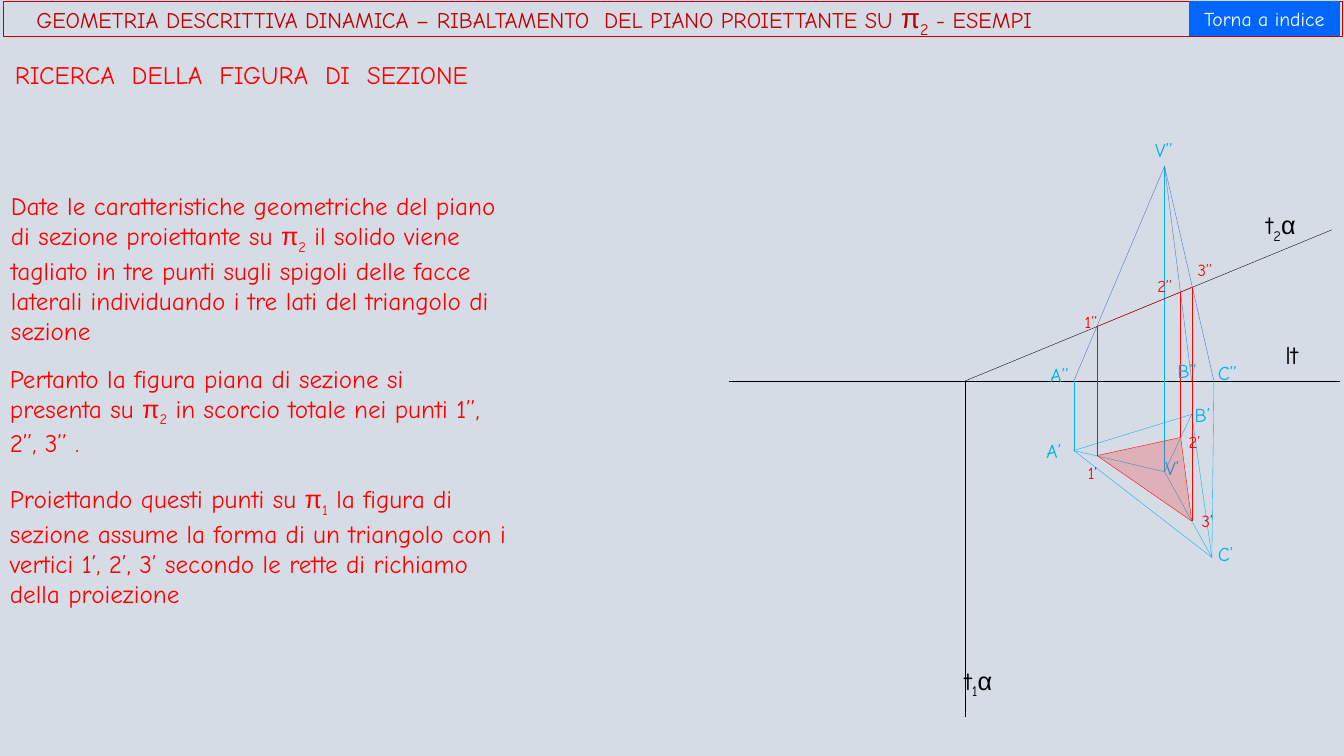
from dataclasses import dataclass
from itertools import combinations, groupby

from lxml.etree import SubElement
from pptx import Presentation
from pptx.dml.color import RGBColor
from pptx.enum.shapes import MSO_CONNECTOR, MSO_SHAPE
from pptx.enum.text import MSO_ANCHOR, MSO_AUTO_SIZE, PP_ALIGN
from pptx.oxml.ns import qn
from pptx.shapes.autoshape import Shape
from pptx.slide import Slide
from pptx.text.text import TextFrame
from pptx.util import Inches, Pt

Point = tuple[float, float]


@dataclass(frozen=True)
class Theme:
    font: str = "Comic Neue"
    symbol_font: str = "Arial"
    background: str = "D6DCE5"
    ink: str = "000000"
    red: str = "FF0000"
    header: str = "C00000"
    cyan: str = "00B0F0"
    blue: str = "4472C4"
    button: str = "0066FF"
    white: str = "FFFFFF"
    body_size: int = 18
    header_size: int = 16
    header_symbol_size: int = 20
    vertex_size: int = 14
    section_size: int = 12
    line_width: float = 0.25
    section_alpha: int = 20


THEME = Theme()
SUBSCRIPTS = {"₁": "1", "₂": "2"}
GREEK = "πα"


@dataclass(frozen=True)
class TextBox:
    text: str
    left: float
    top: float
    width: float
    height: float
    color: str = THEME.red
    size: int = THEME.body_size


@dataclass(frozen=True)
class Segment:
    start: Point
    end: Point
    color: str


def vertex_label(text: str, left: float, top: float) -> TextBox:
    return TextBox(text, left, top, 0.53, 0.34, THEME.cyan, THEME.vertex_size)


def section_label(text: str, left: float, top: float) -> TextBox:
    return TextBox(text, left, top, 0.39, 0.3, THEME.red, THEME.section_size)


GROUND_Y = 3.78
TRACE_ORIGIN = (9.57, GROUND_Y)
V1, V2 = (11.55, 4.68), (11.55, 1.65)
BASE_PLAN = [(10.65, 4.47), (11.82, 4.11), (12.02, 5.53)]
BASE_ELEVATION = [(10.65, GROUND_Y), (11.82, GROUND_Y), (12.04, GROUND_Y)]
SECTION_PLAN = [(10.88, 4.52), (11.71, 4.34), (11.82, 5.17)]
SECTION_ELEVATION = [(10.88, 3.24), (11.71, 2.9), (11.82, 2.85)]

SEGMENTS = [
    Segment((7.23, GROUND_Y), (13.29, GROUND_Y), THEME.ink),
    *[Segment(vertex, V1, THEME.cyan) for vertex in BASE_PLAN],
    Segment(V1, V2, THEME.cyan),
    *[Segment(vertex, V2, THEME.blue) for vertex in BASE_ELEVATION],
    *[Segment(plan, elevation, THEME.cyan)
      for plan, elevation in zip(BASE_PLAN, BASE_ELEVATION)],
    Segment(TRACE_ORIGIN, (9.57, 7.11), THEME.ink),
    Segment(TRACE_ORIGIN, (13.21, 2.28), THEME.ink),
    *[Segment(elevation, plan, THEME.red)
      for elevation, plan in zip(SECTION_ELEVATION, SECTION_PLAN)],
    *[Segment(start, end, THEME.red) for start, end in combinations(SECTION_PLAN, 2)],
    Segment(SECTION_ELEVATION[0], SECTION_ELEVATION[-1], THEME.red),
]

TEXT_BOXES = [
    TextBox("RICERCA  DELLA  FIGURA  DI  SEZIONE", 0.05, 0.54, 6.62, 0.4),
    TextBox("Date le caratteristiche geometriche del piano di sezione proiettante su π₂"
            " il solido viene tagliato in tre punti sugli spigoli delle facce laterali"
            " individuando i tre lati del triangolo di sezione", 0.01, 1.84, 5.23, 1.62),
    TextBox("Pertanto la figura piana di sezione si presenta su π₂ in scorcio totale"
            " nei punti 1’’, 2’’, 3’’ .", 0, 3.55, 5.01, 1.01),
    TextBox("Proiettando questi punti su π₁ la figura di sezione assume la forma di un"
            " triangolo con i vertici 1’, 2’, 3’ secondo le rette di richiamo della"
            " proiezione", 0, 4.75, 5.2, 1.31),
    TextBox("lt", 12.65, 3.32, 0.56, 0.4, THEME.ink),
    TextBox("t₁α", 9.47, 6.55, 0.56, 0.4, THEME.ink),
    TextBox("t₂α", 12.46, 2.03, 0.86, 0.4, THEME.ink),
    vertex_label("A’", 10.28, 4.31),
    vertex_label("B’", 11.75, 3.95),
    vertex_label("C’", 11.98, 5.33),
    vertex_label("V’", 11.46, 4.47),
    vertex_label("A’’", 10.32, 3.55),
    vertex_label("B’’", 11.58, 3.51),
    vertex_label("C’’", 11.98, 3.53),
    vertex_label("V’’", 11.36, 1.32),
    section_label("1’", 10.69, 4.54),
    section_label("2’", 11.69, 4.23),
    section_label("3’", 11.82, 5.02),
    section_label("1’’", 10.66, 3.04),
    section_label("2’’", 11.38, 2.69),
    section_label("3’’", 11.78, 2.53),
]


def character_kind(character: str) -> str:
    if character in SUBSCRIPTS:
        return "subscript"
    return "greek" if character in GREEK else "plain"


def write_text(frame: TextFrame, text: str, *, color: str, size: int,
               symbol_size: int | None = None,
               alignment: PP_ALIGN = PP_ALIGN.LEFT,
               anchor: MSO_ANCHOR = MSO_ANCHOR.TOP,
               auto_size: MSO_AUTO_SIZE = MSO_AUTO_SIZE.NONE,
               line_spacing: float = 1.0) -> None:
    frame.word_wrap = True
    frame.auto_size = auto_size
    frame.vertical_anchor = anchor
    paragraph = frame.paragraphs[0]
    paragraph.alignment = alignment
    paragraph.line_spacing = line_spacing
    for kind, characters in groupby(text, key=character_kind):
        run = paragraph.add_run()
        run.text = "".join(SUBSCRIPTS.get(character, character) for character in characters)
        run.font.name = THEME.symbol_font if kind == "greek" else THEME.font
        run.font.size = Pt(size if kind == "plain" else symbol_size or size)
        run.font.color.rgb = RGBColor.from_string(color)
        if kind == "subscript":
            run.font._element.set("baseline", "-25000")


def add_text_box(slide: Slide, box: TextBox) -> None:
    shape = slide.shapes.add_textbox(
        Inches(box.left), Inches(box.top), Inches(box.width), Inches(box.height))
    write_text(shape.text_frame, box.text, color=box.color, size=box.size,
               auto_size=MSO_AUTO_SIZE.SHAPE_TO_FIT_TEXT)


def add_segment(slide: Slide, segment: Segment) -> None:
    connector = slide.shapes.add_connector(
        MSO_CONNECTOR.STRAIGHT, *map(Inches, segment.start + segment.end))
    connector.line.color.rgb = RGBColor.from_string(segment.color)
    connector.line.width = Pt(THEME.line_width)
    SubElement(connector._element.spPr, qn("a:effectLst"))


def add_triangle(slide: Slide, vertices: list[Point]) -> Shape:
    first, *others = [(Inches(x), Inches(y)) for x, y in vertices]
    builder = slide.shapes.build_freeform(*first)
    builder.add_line_segments(others, close=True)
    triangle = builder.convert_to_shape()
    triangle.shadow.inherit = False
    return triangle


def add_header(slide: Slide) -> None:
    title = slide.shapes.title
    title.left, title.top = Inches(0.03), Inches(0.01)
    title.width, title.height = Inches(13.28), Inches(0.35)
    title.line.color.rgb = RGBColor.from_string(THEME.header)
    title.line.width = Pt(THEME.line_width)
    title.text_frame.margin_left = Inches(0.33)
    write_text(title.text_frame,
               "GEOMETRIA DESCRITTIVA DINAMICA – RIBALTAMENTO  DEL PIANO PROIETTANTE SU π₂ - ESEMPI",
               color=THEME.header, size=THEME.header_size,
               symbol_size=THEME.header_symbol_size,
               anchor=MSO_ANCHOR.MIDDLE, line_spacing=0.9)
    button = slide.shapes.add_shape(MSO_SHAPE.ACTION_BUTTON_CUSTOM,
                                    Inches(11.79), Inches(0.01), Inches(1.5), Inches(0.35))
    button.shadow.inherit = False
    button.fill.solid()
    button.fill.fore_color.rgb = RGBColor.from_string(THEME.button)
    button.line.fill.background()
    write_text(button.text_frame, "Torna a indice", color=THEME.white,
               size=THEME.vertex_size, alignment=PP_ALIGN.CENTER, anchor=MSO_ANCHOR.MIDDLE)


def main() -> None:
    presentation = Presentation()
    presentation.slide_width, presentation.slide_height = Inches(13.33), Inches(7.5)
    slide = presentation.slides.add_slide(presentation.slide_layouts.get_by_name("Title Only"))
    slide.background.fill.solid()
    slide.background.fill.fore_color.rgb = RGBColor.from_string(THEME.background)
    base = add_triangle(slide, BASE_PLAN)
    base.fill.background()
    base.line.color.rgb = RGBColor.from_string(THEME.cyan)
    base.line.width = Pt(THEME.line_width)
    for segment in SEGMENTS:
        add_segment(slide, segment)
    for box in TEXT_BOXES:
        add_text_box(slide, box)
    section = add_triangle(slide, SECTION_PLAN)
    section.line.fill.background()
    section.fill.solid()
    section.fill.fore_color.rgb = RGBColor.from_string(THEME.red)
    color = section._element.spPr.find(qn("a:solidFill")).find(qn("a:srgbClr"))
    SubElement(color, qn("a:alpha")).set("val", str(THEME.section_alpha * 1000))
    add_header(slide)
    presentation.save("out.pptx")


if __name__ == "__main__":
    main()
